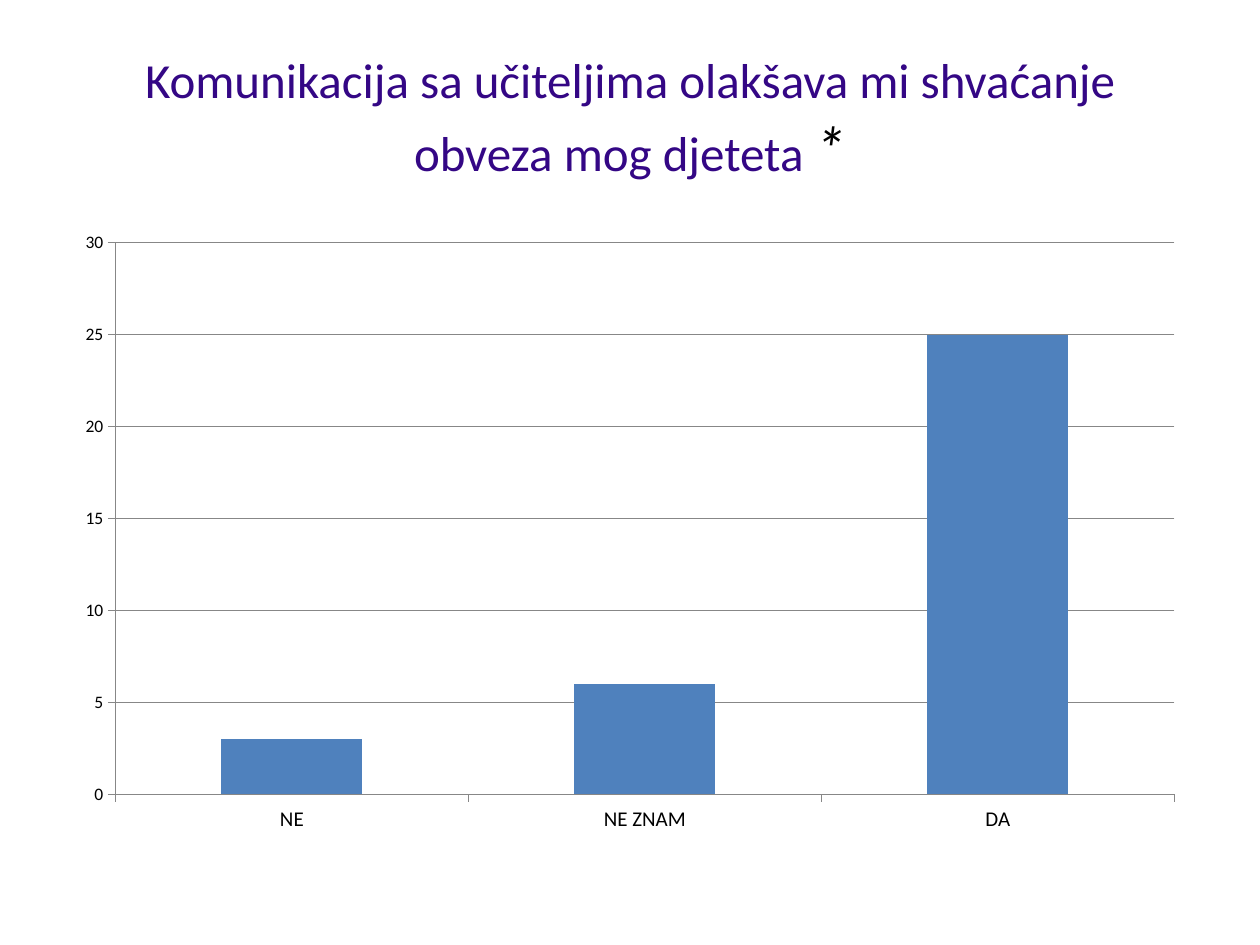
import dataclasses

import pptx
import pptx.chart.data
import pptx.dml.color
import pptx.enum.chart
import pptx.enum.text
import pptx.util

Pt = pptx.util.Pt
RGB = pptx.dml.color.RGBColor.from_string


@dataclasses.dataclass(frozen=True)
class Theme:
    """Colours, font and type sizes of the slide."""
    font: str = "Calibri"
    heading: RGB = RGB("340785")
    ink: RGB = RGB("000000")
    bar: RGB = RGB("4F81BD")
    rule: RGB = RGB("878787")
    heading_size: int = 28
    asterisk_size: int = 36
    category_size: int = 12
    value_size: int = 10


THEME = Theme()


def style_font(font, size, color):
    """Apply the theme font with a size and colour."""
    font.name = THEME.font
    font.size = Pt(size)
    font.color.rgb = color


def add_heading(slide, left, top, width, height):
    """Place the centred survey statement with its asterisk."""
    heading = slide.shapes.add_textbox(Pt(left), Pt(top), Pt(width), Pt(height))
    frame = heading.text_frame
    frame.word_wrap = True
    frame.vertical_anchor = pptx.enum.text.MSO_ANCHOR.MIDDLE
    paragraph = frame.paragraphs[0]
    paragraph.alignment = pptx.enum.text.PP_ALIGN.CENTER
    paragraph.text = "Komunikacija sa učiteljima olakšava mi shvaćanje obveza mog djeteta "
    style_font(paragraph.runs[0].font, THEME.heading_size, THEME.heading)
    asterisk = paragraph.add_run()
    asterisk.text = "*"
    style_font(asterisk.font, THEME.asterisk_size, THEME.ink)
    asterisk.font.italic = True


def add_answers(slide, left, top, width, height):
    """Place the column chart of answers."""
    answers = pptx.chart.data.CategoryChartData()
    answers.categories = ["NE", "NE ZNAM", "DA"]
    answers.add_series("Series 1", (3, 6, 25))
    chart = slide.shapes.add_chart(
        pptx.enum.chart.XL_CHART_TYPE.COLUMN_CLUSTERED,
        Pt(left), Pt(top), Pt(width), Pt(height), answers).chart
    chart.has_legend = False
    chart.has_title = False
    style_font(chart.font, THEME.value_size, THEME.ink)

    plot = chart.plots[0]
    plot.gap_width = 150
    plot.vary_by_categories = False
    columns = plot.series[0]
    columns.format.fill.solid()
    columns.format.fill.fore_color.rgb = THEME.bar

    for axis, size in ((chart.category_axis, THEME.category_size),
                       (chart.value_axis, THEME.value_size)):
        style_font(axis.tick_labels.font, size, THEME.ink)
        axis.major_tick_mark = pptx.enum.chart.XL_TICK_MARK.OUTSIDE
        axis.minor_tick_mark = pptx.enum.chart.XL_TICK_MARK.NONE
        axis.format.line.color.rgb = THEME.rule
        axis.format.line.width = Pt(0.75)

    scale = chart.value_axis
    scale.minimum_scale, scale.maximum_scale, scale.major_unit = 0, 30, 5
    scale.has_major_gridlines = True
    scale.major_gridlines.format.line.color.rgb = THEME.rule
    scale.major_gridlines.format.line.width = Pt(0.75)


def main():
    """Build and save the slide."""
    deck = pptx.Presentation()
    deck.slide_width, deck.slide_height = Pt(720), Pt(540)
    slide = deck.slides.add_slide(deck.slide_layouts[6])
    add_heading(slide, 36, 21.6, 648, 90)
    add_answers(slide, 36, 126, 648, 356.4)
    deck.save("out.pptx")


if __name__ == "__main__":
    main()
